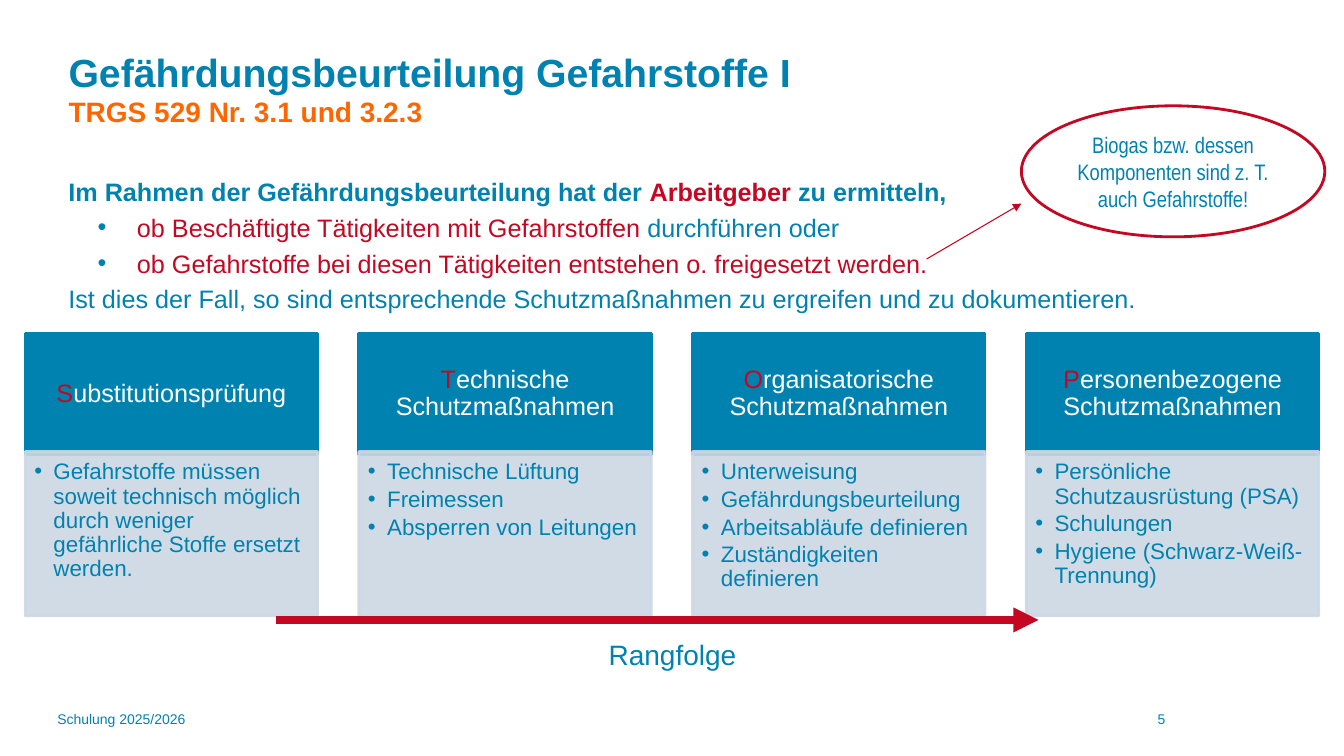
from dataclasses import dataclass

from lxml import etree
from pptx import Presentation
from pptx.dml.color import RGBColor
from pptx.enum.shapes import MSO_CONNECTOR as Connector, MSO_SHAPE as Shape
from pptx.enum.text import MSO_ANCHOR as Anchor, MSO_AUTO_SIZE as AutoSize, PP_ALIGN as Align
from pptx.oxml.ns import qn
from pptx.util import Inches, Pt


@dataclass(frozen=True)
class Theme:
    blue: str = "0082B0"
    red: str = "C40823"
    arrow_red: str = "C4031F"
    orange: str = "FF6600"
    pale: str = "CCD8E4"
    white: str = "FFFFFF"
    font: str = "Arial"
    narrow: str = "Arial Narrow"
    title: int = 28
    large: int = 20
    body: int = 18
    small: int = 16
    footer: int = 10


theme = Theme()


def write(paragraph, runs, size, font=theme.font, bold=False, align=Align.LEFT, bullet=None):
    """Write (text, colour) runs; bullet is the hanging indent as (margin, hang)."""
    if bullet:
        margin, hang = bullet
        props = paragraph._p.get_or_add_pPr()
        props.set("marL", str(Inches(margin)))
        props.set("indent", str(-Inches(hang)))
        bullet_color = etree.SubElement(props, qn("a:buClr"))
        etree.SubElement(bullet_color, qn("a:srgbClr"), val=theme.blue)
        etree.SubElement(props, qn("a:buFont"), typeface=theme.font)
        etree.SubElement(props, qn("a:buChar"), char="•")
    paragraph.alignment = align
    for text, color in runs:
        run = paragraph.add_run()
        run.text = text
        run.font.name, run.font.size, run.font.bold = font, Pt(size), bold
        run.font.color.rgb = RGBColor.from_string(color)


def draw_arrow(start, end, color, width):
    arrow = slide.shapes.add_connector(Connector.STRAIGHT, *map(Inches, start + end))
    arrow.line.color.rgb = RGBColor.from_string(color)
    arrow.line.width = Pt(width)
    etree.SubElement(arrow.line._get_or_add_ln(), qn("a:tailEnd"), type="triangle")
    etree.SubElement(arrow._element.spPr, qn("a:effectLst"))


prs = Presentation()
prs.slide_width, prs.slide_height = Inches(13.33), Inches(7.5)
slide = prs.slides.add_slide(prs.slide_layouts[5])

# Title
title = slide.shapes.title
title.left, title.top, title.width, title.height = map(Inches, (0.58, 0.25, 8.61, 1.25))
title.text_frame.auto_size = AutoSize.NONE
title.text_frame.vertical_anchor = Anchor.MIDDLE
heading = title.text_frame.paragraphs[0]
write(heading, [("Gefährdungsbeurteilung Gefahrstoffe I", theme.blue)], theme.title, bold=True)
heading.add_line_break()
write(heading, [("TRGS 529 Nr. 3.1 und 3.2.3", theme.orange)], theme.large, bold=True)

# Duties of the employer
duties = slide.shapes.add_textbox(*map(Inches, (0.58, 1.7, 12.22, 1.5))).text_frame
duties.word_wrap = True
duty_lines = [
    ([("Im Rahmen der Gefährdungsbeurteilung hat der ", theme.blue),
      ("Arbeitgeber", theme.red), (" zu ermitteln,", theme.blue)], True, None),
    ([("ob Beschäftigte Tätigkeiten mit Gefahrstoffen ", theme.red),
      ("durchführen oder", theme.blue)], False, (0.68, 0.39)),
    ([("ob Gefahrstoffe bei diesen Tätigkeiten entstehen o. freigesetzt werden.", theme.red)],
     False, (0.68, 0.39)),
    ([("Ist dies der Fall, so sind entsprechende Schutzmaßnahmen zu ergreifen "
       "und zu dokumentieren.", theme.blue)], False, None),
]
for i, (runs, bold, bullet) in enumerate(duty_lines):
    line = duties.add_paragraph() if i else duties.paragraphs[0]
    write(line, runs, theme.body, bold=bold, bullet=bullet)
    if i:
        line.space_before = Pt(4)

# STOP columns: heading above measures
measures = {
    "Substitutionsprüfung": ["Gefahrstoffe müssen soweit technisch möglich durch weniger "
                             "gefährliche Stoffe ersetzt werden."],
    "Technische Schutzmaßnahmen": ["Technische Lüftung", "Freimessen",
                                   "Absperren von Leitungen"],
    "Organisatorische Schutzmaßnahmen": ["Unterweisung", "Gefährdungsbeurteilung",
                                         "Arbeitsabläufe definieren",
                                         "Zuständigkeiten definieren"],
    "Personenbezogene Schutzmaßnahmen": ["Persönliche Schutzausrüstung (PSA)", "Schulungen",
                                         "Hygiene (Schwarz-Weiß-Trennung)"],
}
for column, (category, items) in enumerate(measures.items()):
    left = 0.25 + column * 3.31
    parts = [
        (3.31, 1.2, theme.blue, Anchor.MIDDLE, (0.14, 0.08, 0.14, 0.08)),
        (4.48, 1.63, theme.pale, Anchor.TOP, (0.09, 0.09, 0.12, 0.14)),
    ]
    frames = []
    for top, height, color, anchor, insets in parts:
        panel = slide.shapes.add_shape(Shape.RECTANGLE, *map(Inches, (left, top, 2.9, height)))
        panel.shadow.inherit = False
        panel.fill.solid()
        panel.fill.fore_color.rgb = panel.line.color.rgb = RGBColor.from_string(color)
        panel.line.width = Pt(2)
        if color == theme.pale:
            for tint in panel._element.spPr.iter(qn("a:srgbClr")):
                etree.SubElement(tint, qn("a:alpha"), val="90000")
        frame = panel.text_frame
        frame.word_wrap, frame.vertical_anchor = True, anchor
        (frame.margin_left, frame.margin_top,
         frame.margin_right, frame.margin_bottom) = map(Inches, insets)
        frames.append(frame)

    header, details = frames
    label = header.paragraphs[0]
    write(label, [(category[0], theme.red), (category[1:], theme.white)], theme.body,
          align=Align.CENTER)
    label.line_spacing = 0.9
    for i, item in enumerate(items):
        measure = details.add_paragraph() if i else details.paragraphs[0]
        write(measure, [(item, theme.blue)], theme.small, bullet=(0.19, 0.19))
        measure.line_spacing = 0.9
        measure.space_after = Pt(2.4)

# Ranking arrow, its caption and the footer
draw_arrow((2.74, 6.15), (10.3, 6.15), theme.red, 6)
captions = [
    ("Rangfolge", (4.74, 6.28, 3.86, 0.44), theme.large, Align.CENTER),
    ("Schulung 2025/2026", (0.47, 7, 3.25, 0.5), theme.footer, Align.LEFT),
    ("5", (10.13, 7, 2.78, 0.5), theme.footer, Align.CENTER),
]
for text, box, size, align in captions:
    caption = slide.shapes.add_textbox(*map(Inches, box)).text_frame
    caption.word_wrap = True
    write(caption.paragraphs[0], [(text, theme.blue)], size, align=align)

# Biogas remark with its pointer
remark = slide.shapes.add_shape(Shape.OVAL, *map(Inches, (10.13, 1.05, 3.01, 1.3)))
remark.shadow.inherit = False
remark.fill.solid()
remark.fill.fore_color.rgb = RGBColor.from_string(theme.white)
remark.line.color.rgb = RGBColor.from_string(theme.red)
remark.line.width = Pt(2)
remark.text_frame.word_wrap = True
remark.text_frame.vertical_anchor = Anchor.MIDDLE
write(remark.text_frame.paragraphs[0],
      [("Biogas bzw. dessen Komponenten sind z. T. auch Gefahrstoffe!", theme.blue)],
      theme.small, font=theme.narrow, align=Align.CENTER)
draw_arrow((9.19, 2.57), (10.13, 2.02), theme.arrow_red, 0.75)

prs.save("out.pptx")
